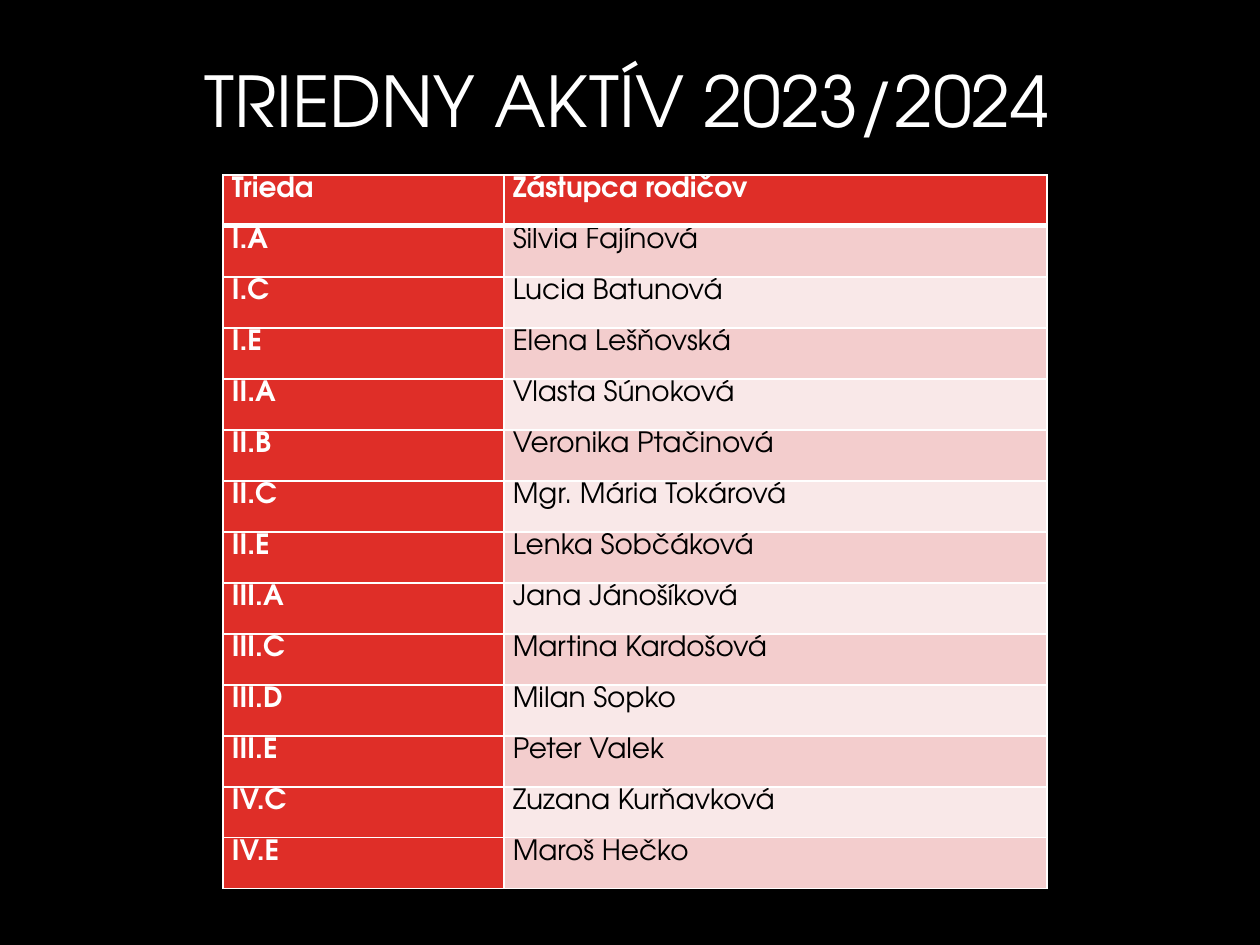
"""Build the class parent representatives slide for 2023/2024."""
from lxml.etree import SubElement
from pptx import Presentation
from pptx.dml.color import RGBColor
from pptx.enum.text import MSO_ANCHOR, PP_ALIGN
from pptx.oxml.ns import qn
from pptx.util import Inches, Pt

THEME = {
    "font": "TeX Gyre Adventor",
    "background": "000000",
    "light": "FFFFFF",
    "dark": "000000",
    "accent": "DF2E28",
    "bands": ("F3CDCD", "F9E8E8"),
    "title_size": 40,
    "table_size": 16,
    "thin": 1,
    "thick": 3,
}

HEADINGS = ("Trieda", "Zástupca rodičov")
REPRESENTATIVES = (
    ("I.A", "Silvia Fajínová"),
    ("I.C", "Lucia Batunová"),
    ("I.E", "Elena Lešňovská"),
    ("II.A", "Vlasta Súnoková"),
    ("II.B", "Veronika Ptačinová"),
    ("II.C", "Mgr. Mária Tokárová"),
    ("II.E", "Lenka Sobčáková"),
    ("III.A", "Jana Jánošíková"),
    ("III.C", "Martina Kardošová"),
    ("III.D", "Milan Sopko"),
    ("III.E", "Peter Valek"),
    ("IV.C", "Zuzana Kurňavková"),
    ("IV.E", "Maroš Hečko"),
)
SPACED_CLASSES = {"III.A", "III.C", "III.E", "IV.C", "IV.E"}


def write(frame, text, *, size, color, bold=False, align=PP_ALIGN.LEFT, leading=1.0, after=0):
    paragraph = frame.paragraphs[0]
    paragraph.alignment = align
    paragraph.line_spacing = leading
    paragraph.space_after = Pt(after)
    run = paragraph.add_run()
    run.text = text
    run.font.name = THEME["font"]
    run.font.size = Pt(size)
    run.font.bold = bold
    run.font.color.rgb = RGBColor.from_string(color)


def draw_border(cell, side, width):
    properties = cell._tc.get_or_add_tcPr()
    line = SubElement(properties, qn(f"a:ln{side}"), w=str(Pt(width)))
    fill = SubElement(line, qn("a:solidFill"))
    SubElement(fill, qn("a:srgbClr"), val=THEME["light"])


deck = Presentation()
deck.slide_width, deck.slide_height = Inches(10), Inches(7.5)
width, height = deck.slide_width, deck.slide_height
slide = deck.slides.add_slide(deck.slide_layouts[6])
slide.background.fill.solid()
slide.background.fill.fore_color.rgb = RGBColor.from_string(THEME["background"])

title = slide.shapes.add_textbox(
    int(width * 0.146), int(height * 0.017), int(width * 0.697), int(height * 0.188)
).text_frame
title.word_wrap = True
title.vertical_anchor = MSO_ANCHOR.MIDDLE
write(title, "TRIEDNY AKTÍV 2023/2024", size=THEME["title_size"],
      color=THEME["light"], align=PP_ALIGN.RIGHT, leading=0.9)

rows = (HEADINGS, *REPRESENTATIVES)
column_widths = [int(width * share) for share in (0.223, 0.431)]
row_height = int(height * 0.054)
roster = slide.shapes.add_table(
    len(rows), len(HEADINGS), int(width * 0.177), int(height * 0.185),
    sum(column_widths), row_height * len(rows)
).table
for column, column_width in zip(roster.columns, column_widths):
    column.width = column_width

for row_index, entries in enumerate(rows):
    roster.rows[row_index].height = row_height
    for column_index, entry in enumerate(entries):
        cell = roster.cell(row_index, column_index)
        cell.margin_left = cell.margin_right = Inches(0.07)
        cell.margin_top = cell.margin_bottom = 0
        emphasised = row_index == 0 or column_index == 0
        borders = dict.fromkeys("LRTB", THEME["thin"])
        if row_index == 0:
            borders["B"] = THEME["thick"]
        elif row_index == 1:
            borders["T"] = THEME["thick"]
        for side, line_width in borders.items():
            draw_border(cell, side, line_width)
        cell.fill.solid()
        cell.fill.fore_color.rgb = RGBColor.from_string(
            THEME["accent"] if emphasised else THEME["bands"][(row_index - 1) % 2])
        write(cell.text_frame, entry, size=THEME["table_size"], bold=emphasised,
              color=THEME["light"] if emphasised else THEME["dark"],
              leading=1.07, after=8 if entries[0] in SPACED_CLASSES else 0)

deck.save("out.pptx")
